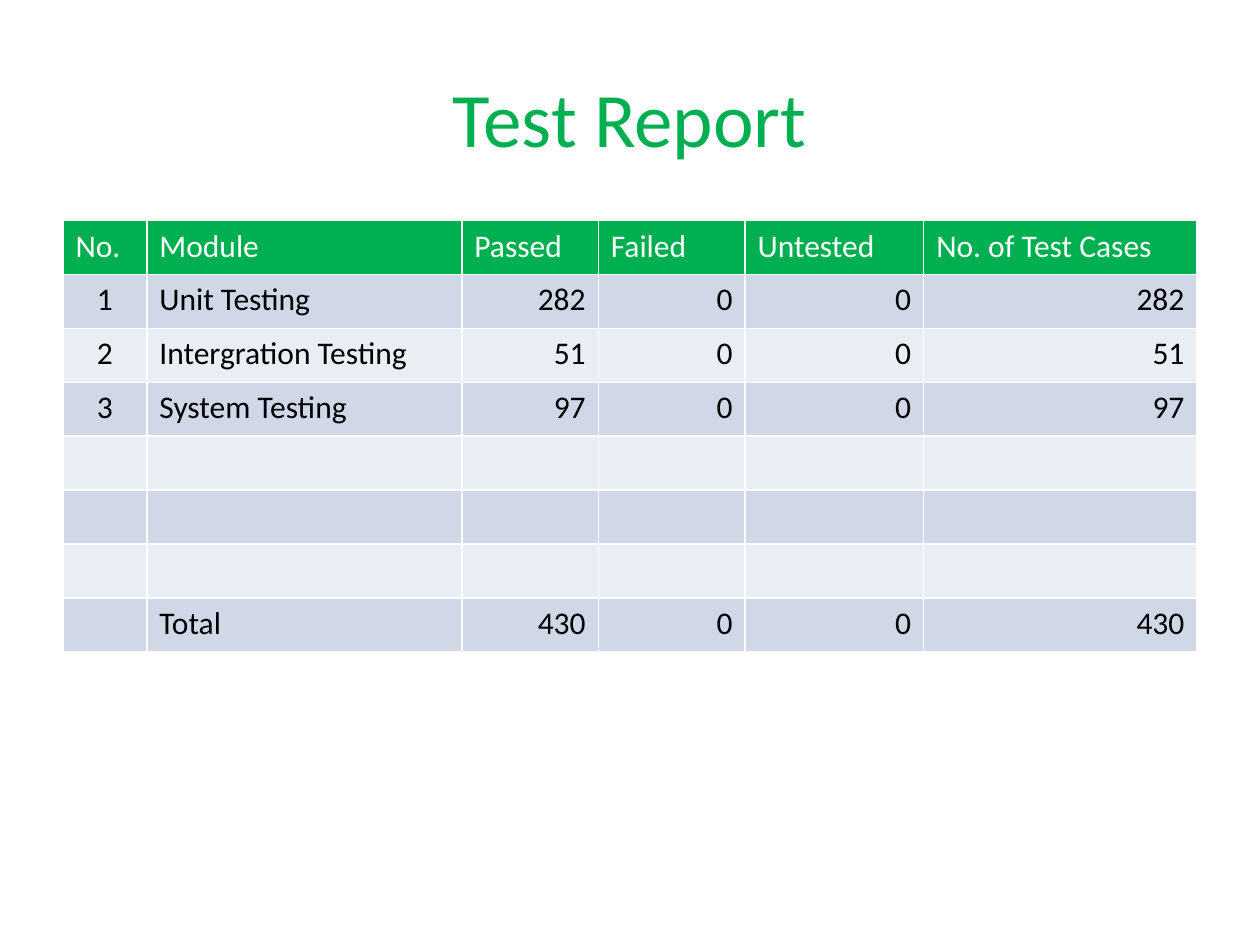
from pptx import Presentation
from pptx.dml.color import RGBColor
from pptx.enum.text import MSO_ANCHOR, PP_ALIGN as Align
from pptx.util import Cm, Pt

COLORS = {
    "green": "00B050",
    "white": "FFFFFF",
    "black": "000000",
    "odd_row": "D0D8E8",
    "even_row": "E9EDF4",
}
TITLE_FORMAT = {"name": "Calibri", "size": Pt(44), "bold": False}
CELL_FORMAT = {"name": "Calibri", "size": Pt(18), "bold": False}

# Heading, width in cm and alignment of the values
COLUMNS = [
    ("No.", 1.69, Align.CENTER),
    ("Module", 6.35, Align.LEFT),
    ("Passed", 2.75, Align.RIGHT),
    ("Failed", 2.96, Align.RIGHT),
    ("Untested", 3.6, Align.RIGHT),
    ("No. of Test Cases", 5.51, Align.RIGHT),
]
BLANK_ROW = ("",) * len(COLUMNS)
RESULTS = [
    ("1", "Unit Testing", "282", "0", "0", "282"),
    ("2", "Intergration Testing", "51", "0", "0", "51"),
    ("3", "System Testing", "97", "0", "0", "97"),
    *[BLANK_ROW] * 3,
    ("", "Total", "430", "0", "0", "430"),
]


def rgb(color):
    return RGBColor.from_string(COLORS[color])


def write(paragraph, text, font_format, color, align):
    if text:
        paragraph.add_run().text = text
    paragraph.alignment = align
    for attribute, value in font_format.items():
        setattr(paragraph.font, attribute, value)
        for run in paragraph.runs:
            setattr(run.font, attribute, value)
    for run in paragraph.runs:
        run.font.color.rgb = rgb(color)


def place_heading(slide, left, top, width, height):
    heading = slide.shapes.title
    box = {"left": left, "top": top, "width": width, "height": height}
    for side, length in box.items():
        setattr(heading, side, Cm(length))
    heading.text_frame.vertical_anchor = MSO_ANCHOR.MIDDLE
    write(heading.text_frame.paragraphs[0], "Test Report",
          TITLE_FORMAT, "green", Align.CENTER)


def place_report(slide, left, top, width, height):
    row_count = len(RESULTS) + 1
    report = slide.shapes.add_table(
        row_count, len(COLUMNS), Cm(left), Cm(top), Cm(width), Cm(height)).table

    for column, (heading, column_width, align) in enumerate(COLUMNS):
        report.columns[column].width = Cm(column_width)
        values = [heading] + [result[column] for result in RESULTS]
        for row, value in enumerate(values):
            is_header = row == 0
            band = "odd_row" if row % 2 else "even_row"
            cell = report.cell(row, column)
            cell.fill.solid()
            cell.fill.fore_color.rgb = rgb("green" if is_header else band)
            write(cell.text_frame.paragraphs[0], value, CELL_FORMAT,
                  "white" if is_header else "black",
                  Align.LEFT if is_header else align)


def main():
    presentation = Presentation()
    presentation.slide_width = Cm(25.4)
    presentation.slide_height = Cm(19.05)
    title_only = presentation.slide_layouts[5]
    slide = presentation.slides.add_slide(title_only)

    # Title above the table of results
    place_heading(slide, left=1.27, top=0.76, width=22.86, height=3.18)
    place_report(slide, left=1.27, top=4.45, width=22.86, height=8.69)

    presentation.save("out.pptx")


if __name__ == "__main__":
    main()
